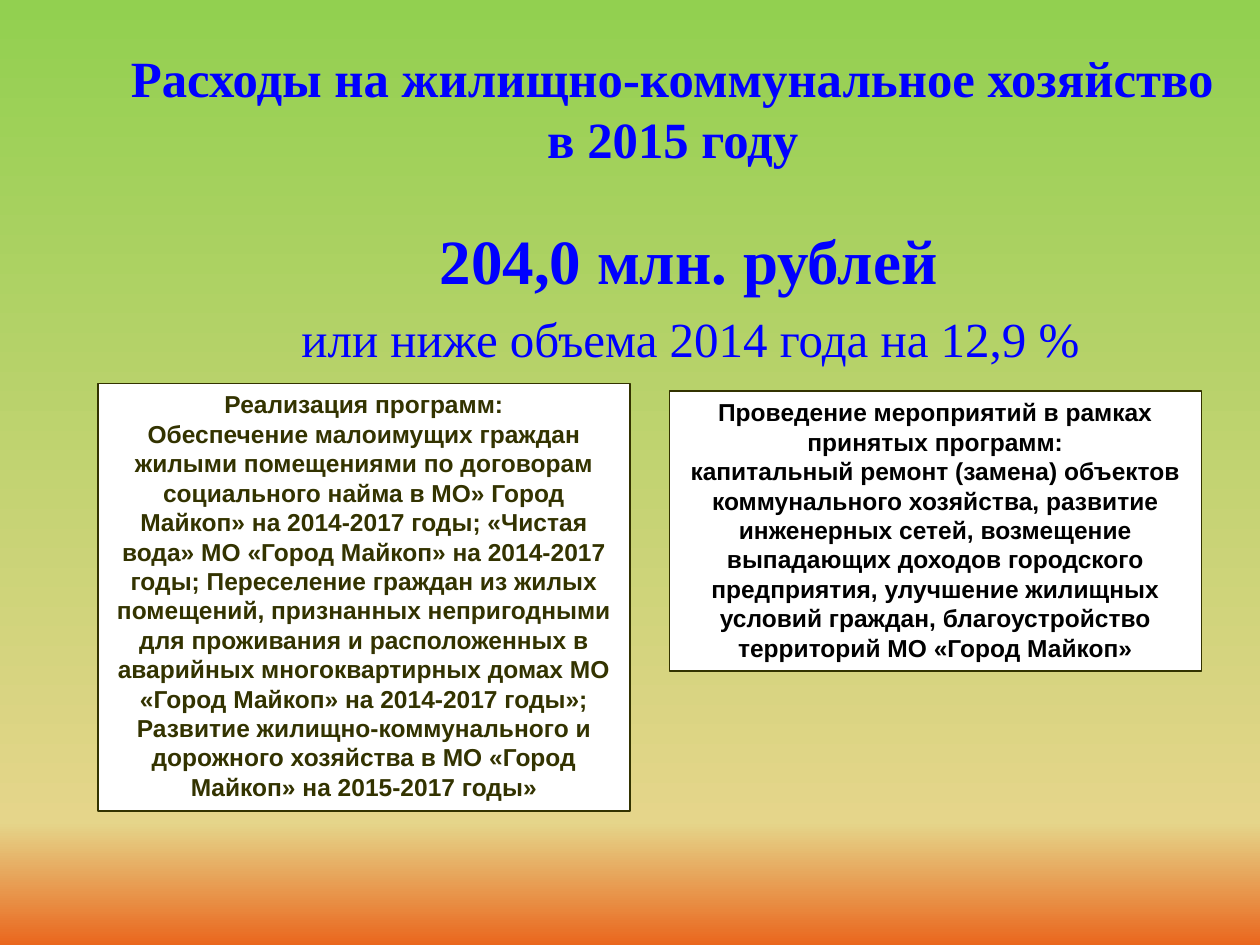
from copy import deepcopy
from dataclasses import dataclass

from pptx import Presentation
from pptx.dml.color import RGBColor
from pptx.enum.shapes import MSO_SHAPE
from pptx.enum.text import MSO_ANCHOR, PP_ALIGN
from pptx.oxml.ns import qn
from pptx.slide import Slide
from pptx.text.text import TextFrame
from pptx.util import Pt

COLORS = {
    "heading": "0000FF",
    "olive": "333300",
    "black": "000000",
    "panel": "FFFFFF",
    "green": "92D050",
    "sand": "E5D58A",
    "orange": "EA671E",
}
SERIF = "Times New Roman"
SANS = "Arial"
PANEL_WIDTH = 304


@dataclass(frozen=True)
class Line:
    text: str
    size: float
    color: str = "heading"
    font: str = SERIF
    bold: bool = True
    space_before: float = 0


@dataclass(frozen=True)
class Box:
    left: float
    top: float
    width: float
    height: float
    lines: tuple[Line, ...]
    anchor: MSO_ANCHOR = MSO_ANCHOR.TOP
    margin_top: float = 3.6


def rgb(color: str) -> RGBColor:
    return RGBColor.from_string(COLORS[color])


def panel_lines(color: str, *texts: str) -> tuple[Line, ...]:
    return tuple(Line(text, 14, color, SANS) for text in texts)


HEADINGS = (
    Box(60, 15, 649, 93,
        (Line("Расходы на жилищно-коммунальное хозяйство в 2015 году", 29),),
        anchor=MSO_ANCHOR.MIDDLE),
    Box(88, 117, 620, 374,
        (Line("204,0 млн. рублей ", 36),
         Line("или ниже объема 2014 года на 12,9 % ", 28, bold=False, space_before=6.5)),
        margin_top=9.6),
)
PANELS = (
    Box(56, 219, PANEL_WIDTH, 244.5, panel_lines(
        "olive",
        "Реализация программ:",
        "Обеспечение малоимущих граждан жилыми помещениями по договорам социального "
        "найма в МО» Город Майкоп» на 2014-2017 годы; «Чистая вода» МО «Город Майкоп» "
        "на 2014-2017 годы; Переселение граждан из жилых помещений, признанных "
        "непригодными для проживания и расположенных в аварийных многоквартирных домах "
        "МО «Город Майкоп» на 2014-2017 годы»; Развитие жилищно-коммунального и "
        "дорожного хозяйства в МО «Город Майкоп» на 2015-2017 годы»")),
    Box(382.5, 223.5, PANEL_WIDTH, 160, panel_lines(
        "black",
        "Проведение мероприятий в рамках принятых программ:",
        "капитальный ремонт (замена) объектов коммунального хозяйства, развитие "
        "инженерных сетей, возмещение выпадающих доходов городского предприятия, "
        "улучшение жилищных условий граждан, благоустройство территорий "
        "МО «Город Майкоп»")),
)


def paint_background(slide: Slide) -> None:
    fill = slide.background.fill
    fill.gradient()
    fill.gradient_angle = 270
    stop_list = next(slide.element.iter(qn("a:gsLst")))
    stop_list.append(deepcopy(stop_list[-1]))
    bands = (("green", 0), ("sand", 0.87), ("orange", 1))
    for stop, (color, position) in zip(fill.gradient_stops, bands):
        stop.color.rgb = rgb(color)
        stop.position = position


def write_lines(frame: TextFrame, box: Box) -> None:
    frame.word_wrap = True
    frame.vertical_anchor = box.anchor
    frame.margin_top = Pt(box.margin_top)
    for index, line in enumerate(box.lines):
        paragraph = frame.add_paragraph() if index else frame.paragraphs[0]
        paragraph.alignment = PP_ALIGN.CENTER
        if line.space_before:
            paragraph.space_before = Pt(line.space_before)
        run = paragraph.add_run()
        run.text = line.text
        run.font.name = line.font
        run.font.size = Pt(line.size)
        run.font.bold = line.bold
        run.font.color.rgb = rgb(line.color)


def add_heading(slide: Slide, box: Box) -> None:
    heading = slide.shapes.add_textbox(
        Pt(box.left), Pt(box.top), Pt(box.width), Pt(box.height))
    write_lines(heading.text_frame, box)


def add_panel(slide: Slide, box: Box) -> None:
    panel = slide.shapes.add_shape(
        MSO_SHAPE.RECTANGLE, Pt(box.left), Pt(box.top), Pt(box.width), Pt(box.height))
    panel.shadow.inherit = False
    panel.fill.solid()
    panel.fill.fore_color.rgb = rgb("panel")
    panel.line.color.rgb = rgb("olive")
    panel.line.width = Pt(0.75)
    write_lines(panel.text_frame, box)


def main() -> None:
    """Build the slide on housing and utilities spending in 2015."""
    presentation = Presentation()
    presentation.slide_width, presentation.slide_height = Pt(720), Pt(540)
    slide = presentation.slides.add_slide(presentation.slide_layouts[6])
    paint_background(slide)
    for heading in HEADINGS:
        add_heading(slide, heading)
    for panel in PANELS:
        add_panel(slide, panel)
    presentation.save("out.pptx")


if __name__ == "__main__":
    main()
